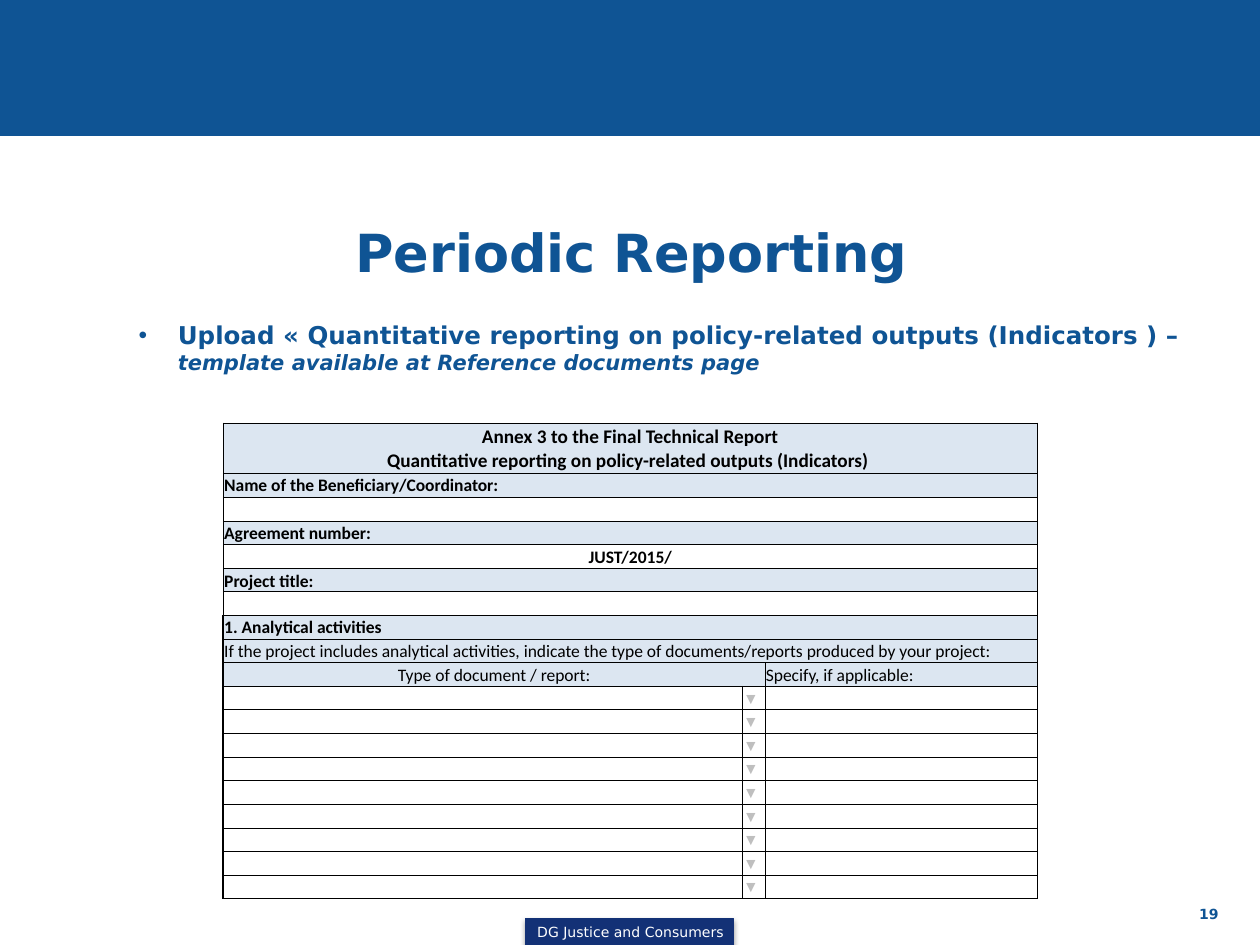
from dataclasses import dataclass

from lxml import etree
from pptx import Presentation
from pptx.dml.color import RGBColor
from pptx.enum.shapes import MSO_SHAPE
from pptx.enum.text import MSO_ANCHOR, MSO_AUTO_SIZE, PP_ALIGN
from pptx.oxml.ns import qn
from pptx.util import Cm, Pt

LEFT, CENTER, RIGHT = PP_ALIGN.LEFT, PP_ALIGN.CENTER, PP_ALIGN.RIGHT
TOP, MIDDLE, BOTTOM = MSO_ANCHOR.TOP, MSO_ANCHOR.MIDDLE, MSO_ANCHOR.BOTTOM
RECTANGLE = MSO_SHAPE.RECTANGLE
NO_AUTOFIT = MSO_AUTO_SIZE.NONE

COLORS = {
    "blue": "0F5494",
    "navy": "133176",
    "white": "FFFFFF",
    "black": "000000",
    "pale": "DCE6F1",
    "arrow": "BFBFBF",
}
SLIDE_FONT = "DejaVu Sans"
FORM_FONT = "Calibri"
THIN, THICK = 0.5, 1

TABLE_BOX = (4.5, 8.53, 16.41, 9.6)
COLUMN_WIDTHS = (10.46, 0.46, 5.49)
HEADING_HEIGHT = 1.02
CHOICE_ROWS = 9


@dataclass(frozen=True)
class Entry:
    """One form cell, possibly spanning several columns."""
    text: str = ""
    span: int = 1
    fill: str | None = None
    align: PP_ALIGN = LEFT
    anchor: MSO_ANCHOR = BOTTOM
    bold: bool = True
    size: float = 10
    font: str = FORM_FONT
    color: str = "black"
    borders: tuple = (THIN, THIN, THIN, THIN)  # left, right, top, bottom


@dataclass(frozen=True)
class Label:
    text: str
    box: tuple
    align: PP_ALIGN
    color: str
    bold: bool = False


OUTER = (THICK, THICK, THIN, THIN)
LEFT_EDGE = (THICK, THIN, THIN, THIN)
RIGHT_EDGE = (THIN, THICK, THIN, THIN)
BLANK_ROW = [Entry(span=3)]
CHOICE_ROW = [
    Entry(fill="white", borders=LEFT_EDGE),
    Entry("▼", fill="white", anchor=MIDDLE, bold=False, size=9, font="Arial", color="arrow"),
    Entry(fill="white", borders=RIGHT_EDGE),
]
FORM = [
    [Entry("Annex 3 to the Final Technical Report\n"
           "Quantitative reporting on policy-related outputs (Indicators) ",
           3, "pale", CENTER, MIDDLE, size=11)],
    [Entry("Name of the Beneficiary/Coordinator:", fill="pale", anchor=TOP,
           borders=(THIN, 0, THIN, THIN)),
     Entry(fill="pale", borders=(0, 0, THIN, THIN)),
     Entry(fill="pale", borders=(0, THIN, THIN, THIN))],
    BLANK_ROW,
    [Entry("Agreement number:", 3, "pale")],
    [Entry("JUST/2015/", 3, align=CENTER)],
    [Entry("Project title:", 3, "pale")],
    BLANK_ROW,
    [Entry("1. Analytical activities", 3, "pale", anchor=MIDDLE, borders=OUTER)],
    [Entry("If the project includes analytical activities, indicate the type of "
           "documents/reports produced by your project:",
           3, "pale", anchor=MIDDLE, bold=False, borders=OUTER)],
    [Entry("Type of document / report:", 2, "pale", CENTER, bold=False, borders=LEFT_EDGE),
     Entry("Specify, if applicable:", fill="pale", bold=False, borders=RIGHT_EDGE)],
] + [CHOICE_ROW] * CHOICE_ROWS

LABELS = [
    Label("DG Justice and Consumers", (8.69, 18.49, 8.05, 1.35), CENTER, "white"),
    Label("19", (18.9, 18.14, 5.92, 1.32), RIGHT, "blue", True),
]


def rgb(name: str) -> RGBColor:
    return RGBColor.from_string(COLORS[name])


def place(shape, box: tuple) -> None:
    shape.left, shape.top, shape.width, shape.height = map(Cm, box)


def add_run(paragraph, text: str, size: float, color: str, bold=False, italic=False,
            font=SLIDE_FONT) -> None:
    run = paragraph.add_run()
    run.text = text
    run.font.name = font
    run.font.size = Pt(size)
    run.font.bold = bold
    run.font.italic = italic
    run.font.color.rgb = rgb(color)


def add_band(slide, box: tuple, color: str):
    band = slide.shapes.add_shape(RECTANGLE, *map(Cm, box))
    band.shadow.inherit = False
    band.fill.solid()
    band.fill.fore_color.rgb = rgb(color)
    band.line.color.rgb = rgb(color)
    band.line.width = Pt(0.75)
    return band


def add_solid_fill(parent, color: str):
    fill = etree.SubElement(parent, qn("a:solidFill"))
    return etree.SubElement(fill, qn("a:srgbClr"), val=COLORS[color])


def add_drop_shadow(shape) -> None:
    effects = shape._element.spPr.find(qn("a:effectLst"))
    shadow = etree.SubElement(effects, qn("a:outerShdw"), blurRad=str(Pt(3.1)),
                              dist=str(Pt(1.8)), dir="5400000", rotWithShape="0")
    shade = etree.SubElement(shadow, qn("a:srgbClr"), val=COLORS["black"])
    etree.SubElement(shade, qn("a:alpha"), val="35000")


def add_label(slide, label: Label) -> None:
    frame = slide.shapes.add_textbox(*map(Cm, label.box)).text_frame
    frame.word_wrap = True
    paragraph = frame.paragraphs[0]
    paragraph.alignment = label.align
    add_run(paragraph, label.text, 8, label.color, label.bold)


def fill_title(title) -> None:
    place(title, (1.3, 4.32, 22.86, 1.52))
    title.text_frame.auto_size = NO_AUTOFIT
    title.text_frame.vertical_anchor = MIDDLE
    heading = title.text_frame.paragraphs[0]
    heading.alignment = CENTER
    add_run(heading, "Periodic Reporting", 30, "blue", True)


def fill_body(body) -> None:
    place(body, (1.27, 6.32, 22.86, 10.9))
    body.text_frame.auto_size = NO_AUTOFIT
    item = body.text_frame.paragraphs[0]
    item.level = 1
    item.space_before = Pt(0)
    properties = item._p.get_or_add_pPr()
    properties.set("marL", str(Cm(2.06)))
    properties.set("indent", str(Cm(-0.79)))
    bullet_color = etree.SubElement(properties, qn("a:buClr"))
    etree.SubElement(bullet_color, qn("a:srgbClr"), val=COLORS["blue"])
    etree.SubElement(properties, qn("a:buFont"), typeface="Arial")
    etree.SubElement(properties, qn("a:buChar"), char="•")
    add_run(item, "Upload « Quantitative reporting on policy-related outputs "
                  "(Indicators ) – ", 14, "blue", True)
    add_run(item, "template available at Reference documents page", 12, "blue", True, True)


def style_cell(cell, entry: Entry) -> None:
    cell.margin_left = cell.margin_right = cell.margin_top = Cm(0.02)
    cell.margin_bottom = 0
    cell.vertical_anchor = entry.anchor
    properties = cell._tc.get_or_add_tcPr()
    for side, width in zip("LRTB", entry.borders):
        line = etree.SubElement(properties, qn(f"a:ln{side}"), w=str(Pt(width)))
        if width:
            add_solid_fill(line, "black")
        else:
            etree.SubElement(line, qn("a:noFill"))
    if entry.fill:
        cell.fill.solid()
        cell.fill.fore_color.rgb = rgb(entry.fill)
    else:
        cell.fill.background()


def write_cell(cell, entry: Entry) -> None:
    paragraph = cell.text_frame.paragraphs[0]
    paragraph.alignment = entry.align
    if not entry.text:
        etree.SubElement(paragraph._p, qn("a:endParaRPr"), sz=str(int(entry.size * 100)))
        return
    for index, line in enumerate(entry.text.split("\n")):
        if index:
            paragraph.add_line_break()
        add_run(paragraph, line, entry.size, entry.color, entry.bold, font=entry.font)


def add_form(slide) -> None:
    table = slide.shapes.add_table(len(FORM), len(COLUMN_WIDTHS), *map(Cm, TABLE_BOX)).table
    table.first_row = table.horz_banding = False
    for column, width in zip(table.columns, COLUMN_WIDTHS):
        column.width = Cm(width)
    row_height = (TABLE_BOX[3] - HEADING_HEIGHT) / (len(FORM) - 1)
    for row_index, entries in enumerate(FORM):
        table.rows[row_index].height = Cm(row_height if row_index else HEADING_HEIGHT)
        start = 0
        for entry in entries:
            end = start + entry.span
            for column_index in range(start, end):
                style_cell(table.cell(row_index, column_index), entry)
            origin = table.cell(row_index, start)
            if entry.span > 1:
                origin.merge(table.cell(row_index, end - 1))
            write_cell(origin, entry)
            start = end


def main() -> None:
    deck = Presentation()
    deck.slide_width, deck.slide_height = Cm(25.4), Cm(19.05)
    slide = deck.slides.add_slide(deck.slide_layouts[1])
    add_band(slide, (0, 0, 25.4, 2.74), "blue")
    add_drop_shadow(add_band(slide, (10.59, 18.52, 4.2, 0.55), "navy"))
    fill_title(slide.shapes.title)
    fill_body(slide.placeholders[1])
    for label in LABELS:
        add_label(slide, label)
    add_form(slide)
    deck.save("out.pptx")


if __name__ == "__main__":
    main()
